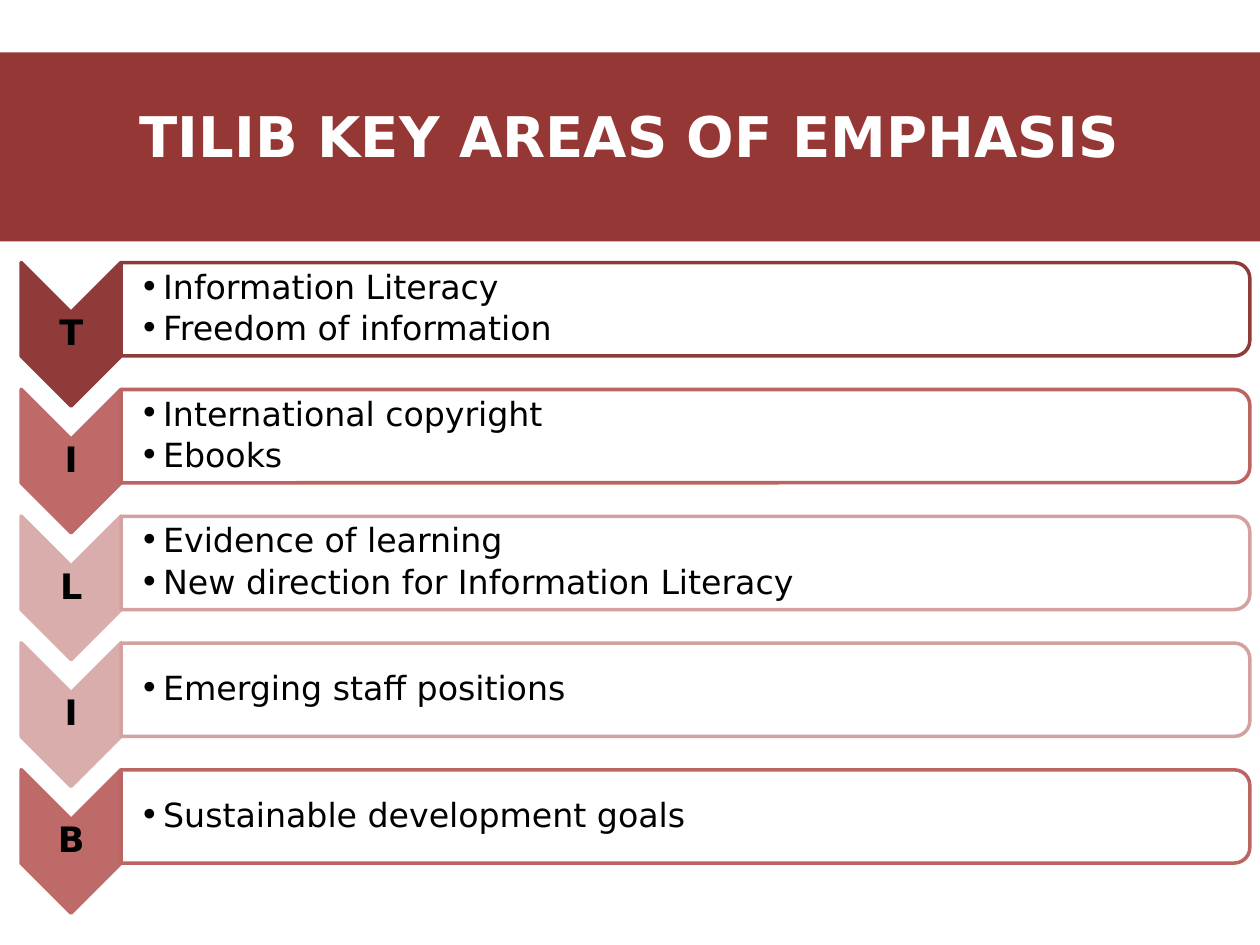
from lxml import etree
from pptx import Presentation
from pptx.dml.color import RGBColor
from pptx.enum import shapes, text
from pptx.oxml import ns
from pptx.util import Pt

FONT = "DejaVu Sans"
BLACK = RGBColor(0x00, 0x00, 0x00)
WHITE = RGBColor(0xFF, 0xFF, 0xFF)
BANNER = RGBColor(0x95, 0x37, 0x35)
DARK = RGBColor(0x8E, 0x3B, 0x39)
MEDIUM = RGBColor(0xBD, 0x6A, 0x68)
MEDIUM_EDGE = RGBColor(0xBB, 0x64, 0x62)
LIGHT = RGBColor(0xD8, 0xAD, 0xAC)
LIGHT_EDGE = RGBColor(0xD3, 0xA1, 0xA0)

AREAS = [
    ("T", DARK, DARK, ["Information Literacy", "Freedom of information"]),
    ("I", MEDIUM, MEDIUM_EDGE, ["International copyright", "Ebooks"]),
    ("L", LIGHT, LIGHT_EDGE, ["Evidence of learning", "New direction for Information Literacy"]),
    ("I", LIGHT, LIGHT_EDGE, ["Emerging staff positions"]),
    ("B", MEDIUM, MEDIUM_EDGE, ["Sustainable development goals"]),
]
ROW_PITCH = 72.45

deck = Presentation()
deck.slide_width, deck.slide_height = Pt(720), Pt(540)
slide = deck.slides.add_slide(deck.slide_layouts[6])


def add_turned_shape(kind, center_x, center_y, width, height, fill, edge):
    """Add a shape turned 90 degrees; width and height are those before the turn."""
    shape = slide.shapes.add_shape(
        kind, Pt(center_x - width / 2), Pt(center_y - height / 2), Pt(width), Pt(height))
    shape.rotation = 90
    shape.shadow.inherit = False
    shape.fill.solid()
    shape.fill.fore_color.rgb = fill
    shape.line.color.rgb = edge
    shape.line.width = Pt(2)


def add_text(left, top, width, height, lines, size, left_inset):
    """Add a vertically centred text box and return its paragraphs."""
    box = slide.shapes.add_textbox(Pt(left), Pt(top), Pt(width), Pt(height))
    frame = box.text_frame
    frame.word_wrap = True
    frame.vertical_anchor = text.MSO_ANCHOR.MIDDLE
    frame.margin_left = Pt(left_inset)
    frame.margin_right = frame.margin_top = frame.margin_bottom = Pt(0.9)
    frame.text = "\n".join(lines)
    for para in frame.paragraphs:
        para.line_spacing = 0.9
        para.font.name = FONT
        para.font.size = Pt(size)
        para.font.color.rgb = BLACK
    return frame.paragraphs


banner = slide.shapes.add_shape(
    shapes.MSO_SHAPE.RECTANGLE, Pt(0), Pt(30), Pt(720), Pt(108))
banner.shadow.inherit = False
banner.fill.solid()
banner.fill.fore_color.rgb = BANNER
banner.line.fill.background()
banner.text_frame.word_wrap = True
banner.text_frame.vertical_anchor = text.MSO_ANCHOR.MIDDLE
banner.text_frame.margin_bottom = Pt(10)
title = banner.text_frame.paragraphs[0]
title.text = "TILIB KEY AREAS OF EMPHASIS"
title.alignment = text.PP_ALIGN.CENTER
title.line_spacing = 0.8
title.font.name = FONT
title.font.size = Pt(32)
title.font.bold = True
title.font.color.rgb = WHITE

for row, (letter, fill, edge, points) in enumerate(AREAS):
    offset = row * ROW_PITCH
    add_turned_shape(shapes.MSO_SHAPE.CHEVRON, 40.6, 191 + offset, 82, 57, fill, fill)
    [label] = add_text(12.2, 178.8 + offset, 57, 24.5, [letter], 20, 0.9)
    label.alignment = text.PP_ALIGN.CENTER
    label.font.bold = True

    add_turned_shape(shapes.MSO_SHAPE.ROUND_2_SAME_RECTANGLE, 391.7, 176.8 + offset,
                     53.3, 645, WHITE, edge)
    for para in add_text(69.1, 152.8 + offset, 642, 48, points, 19, 10.7):
        para.space_after = Pt(3.3)
        properties = para._p.get_or_add_pPr()
        properties.set("marL", str(Pt(13.5)))
        properties.set("indent", str(Pt(-13.5)))
        bullet_font = etree.SubElement(properties, ns.qn("a:buFont"), typeface=FONT)
        bullet = etree.SubElement(properties, ns.qn("a:buChar"), char="•")
        defaults = properties.find(ns.qn("a:defRPr"))
        if defaults is not None:
            defaults.addprevious(bullet_font)
            defaults.addprevious(bullet)

deck.save("out.pptx")
